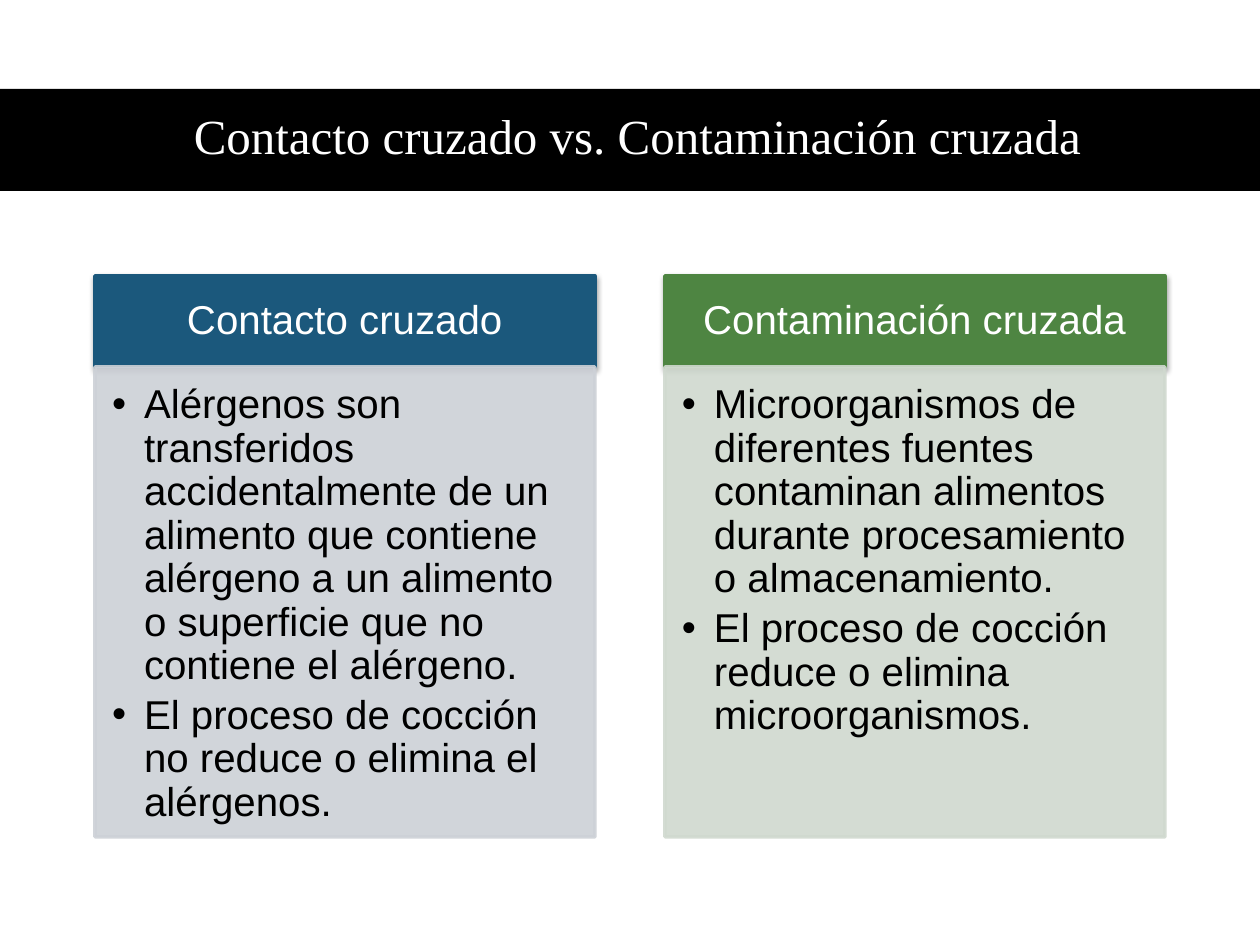
from lxml.etree import SubElement
from pptx import Presentation
from pptx.dml.color import RGBColor
from pptx.enum.shapes import MSO_SHAPE
from pptx.enum.text import MSO_ANCHOR, MSO_AUTO_SIZE, PP_ALIGN
from pptx.oxml.ns import qn
from pptx.util import Pt

PX = 914400 // 126  # EMU per px
COLORS = {
    "black": "000000", "white": "FFFFFF",
    "blue": "1B587C", "blue_tint": "CDD1D7",
    "green": "4E8542", "green_tint": "D0D9CF",
}
COLUMNS = [
    ("Contacto cruzado", "blue", [
        "Alérgenos son transferidos accidentalmente de un alimento que contiene "
        "alérgeno a un alimento o superficie que no contiene el alérgeno.",
        "El proceso de cocción no reduce o elimina el alérgenos.",
    ]),
    ("Contaminación cruzada", "green", [
        "Microorganismos de diferentes fuentes contaminan alimentos durante "
        "procesamiento o almacenamiento.",
        "El proceso de cocción reduce o elimina microorganismos.",
    ]),
]
COLUMN_WIDTH, COLUMN_GAP = 500, 70
HEADER_HEIGHT = 91


def rgb(name):
    return RGBColor.from_string(COLORS[name])


def place(shape, left, top, width, height):
    shape.left, shape.top = left * PX, top * PX
    shape.width, shape.height = width * PX, height * PX


def paint(shape, color, alpha=None):
    """Give fill and outline one colour, with optional opacity in percent."""
    for fill in (shape.fill, shape.line.fill):
        fill.solid()
        fill.fore_color.rgb = rgb(color)
    shape.line.width = Pt(2)
    if alpha:
        for clr in shape._element.spPr.iter(qn("a:srgbClr")):
            SubElement(clr, qn("a:alpha"), val=str(alpha * 1000))


def add_shadow(shape):
    effects = SubElement(shape._element.spPr, qn("a:effectLst"))
    shadow = SubElement(effects, qn("a:outerShdw"), blurRad=str(Pt(3.1)),
                        dist=str(Pt(1.6)), dir="5400000", rotWithShape="0")
    clr = SubElement(shadow, qn("a:srgbClr"), val=COLORS["black"])
    SubElement(clr, qn("a:alpha"), val="38000")


def write(shape, lines, font, size, color, align, anchor, insets, gap=0):
    frame = shape.text_frame
    frame.text = "\n".join(lines)
    frame.word_wrap = True
    frame.auto_size = MSO_AUTO_SIZE.NONE
    frame.vertical_anchor = anchor
    (frame.margin_left, frame.margin_top,
     frame.margin_right, frame.margin_bottom) = (inset * PX for inset in insets)
    for paragraph in frame.paragraphs:
        paragraph.alignment = align
        paragraph.line_spacing = 0.9
        paragraph.space_before = Pt(0)
        paragraph.space_after = Pt(gap)
        for run in paragraph.runs:
            run.font.name, run.font.size = font, Pt(size)
            run.font.bold = False
            run.font.color.rgb = rgb(color)


def add_bullets(frame, indent):
    for paragraph in frame.paragraphs:
        props = paragraph._p.get_or_add_pPr()
        props.set("marL", str(indent * PX))
        props.set("indent", str(-indent * PX))
        SubElement(props, qn("a:buFont"), typeface="Arial")
        SubElement(props, qn("a:buChar"), char="•")


def build_title(slide, left, top, width, height):
    # Full-width band, placed behind the title
    band = slide.shapes.add_shape(MSO_SHAPE.RECTANGLE, 0, 0, 0, 0)
    place(band, left, top, width, height)
    band.shadow.inherit = False
    band.fill.solid()
    band.fill.fore_color.rgb = rgb("black")
    band.line.fill.background()
    slide.shapes._spTree.insert(2, band._element)

    title = slide.shapes.title
    place(title, left + 58, top - 1, width - 101, height)
    write(title, ["Contacto cruzado vs. Contaminación cruzada"], "Times New Roman",
          28, "white", PP_ALIGN.CENTER, MSO_ANCHOR.MIDDLE, (13, 6, 13, 6))


def build_column(header, body, content, left, top, width, height):
    heading, color, points = content
    # Coloured heading
    place(header, left, top, width, HEADER_HEIGHT)
    paint(header, color)
    add_shadow(header)
    write(header, [heading], "Arial", 23, "white", PP_ALIGN.CENTER,
          MSO_ANCHOR.MIDDLE, (23, 13, 23, 13))
    # Tinted list
    place(body, left, top + HEADER_HEIGHT, width, height - HEADER_HEIGHT)
    paint(body, color + "_tint", alpha=90)
    write(body, points, "Arial", 23, "black", PP_ALIGN.LEFT,
          MSO_ANCHOR.TOP, (17, 17, 23, 25), gap=3.7)
    add_bullets(body.text_frame, 32)


def main():
    prs = Presentation()
    prs.slide_width, prs.slide_height = 1260 * PX, 945 * PX
    slide = prs.slides.add_slide(prs.slide_layouts.get_by_name("Comparison"))
    build_title(slide, 0, 89, 1260, 102)
    parts = slide.placeholders
    for i, content in enumerate(COLUMNS):
        build_column(parts[2 * i + 1], parts[2 * i + 2], content,
                     95 + i * (COLUMN_WIDTH + COLUMN_GAP), 276, COLUMN_WIDTH, 561)
    prs.save("out.pptx")


if __name__ == "__main__":
    main()
